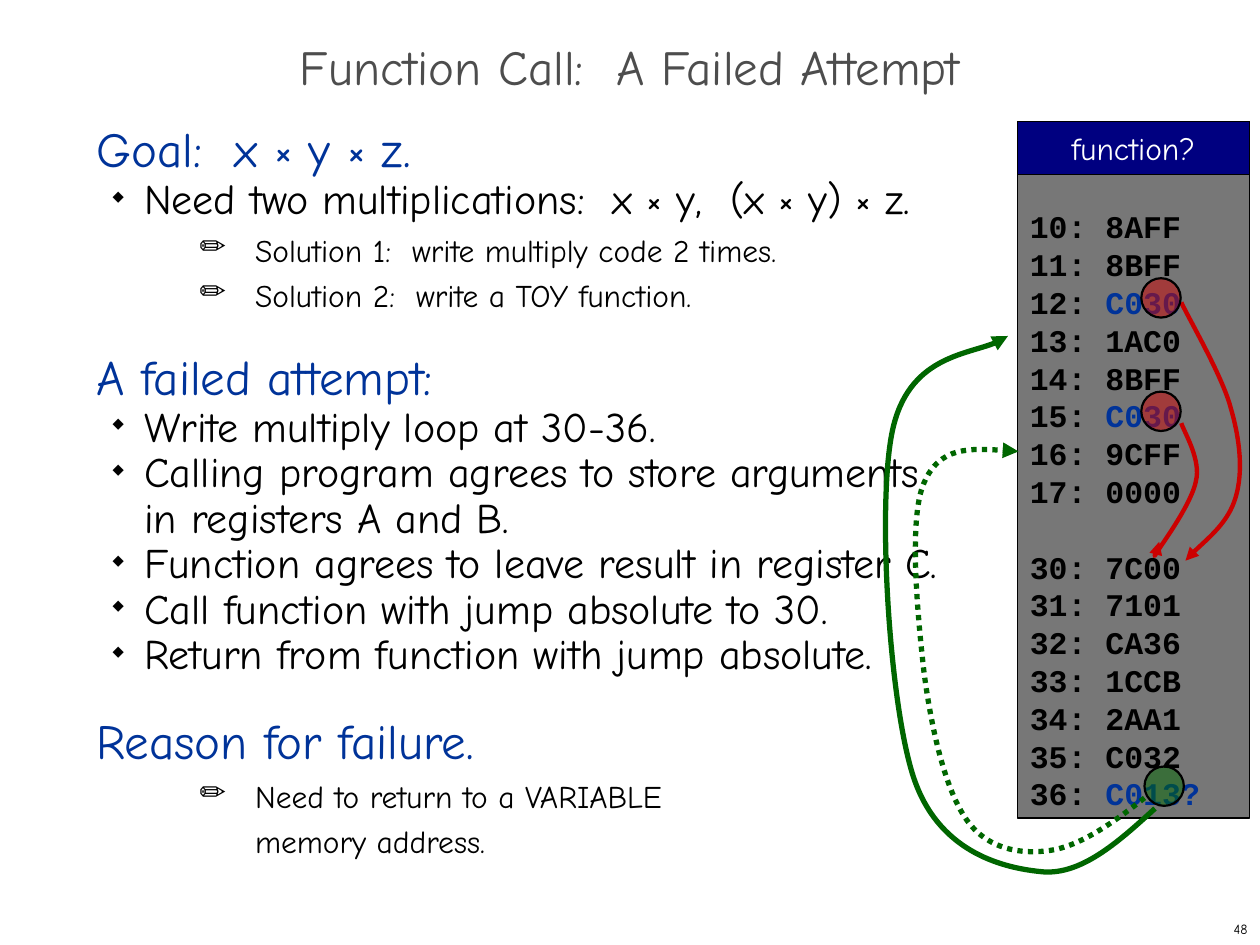
from lxml.etree import SubElement
from pptx import Presentation
from pptx.dml.color import RGBColor
from pptx.enum.dml import MSO_LINE
from pptx.enum.shapes import MSO_SHAPE as Shape
from pptx.enum.text import MSO_ANCHOR as Anchor, PP_ALIGN as Align
from pptx.oxml.ns import qn
from pptx.util import Inches, Pt

BLACK = RGBColor(0x00, 0x00, 0x00)
WHITE = RGBColor(0xFF, 0xFF, 0xFF)
TITLE_GRAY = RGBColor(0x4D, 0x4D, 0x4D)
PANEL_GRAY = RGBColor(0x77, 0x77, 0x77)
BLUE = RGBColor(0x00, 0x33, 0x99)
NAVY = RGBColor(0x00, 0x00, 0x80)
RED = RGBColor(0xCC, 0x00, 0x00)
GREEN = RGBColor(0x00, 0x66, 0x00)

# Outline levels: size, colour, margin, indent (inches), bullet, bullet size
LEVELS = {
    "heading": (28, BLUE, 0, 0, None, None),
    "point": (24, BLACK, 0.38, -0.25, "◆", 35),
    "detail": (18, BLACK, 1.26, -0.44, "✏", 100),
}
OUTLINE = [
    ("heading", "Goal:  x × y × z."),
    ("point", "Need two multiplications:  x × y,  (x × y) × z."),
    ("detail", "Solution 1:  write multiply code 2 times."),
    ("detail", "Solution 2:  write a TOY function."),
    ("heading", "A failed attempt:"),
    ("point", "Write multiply loop at 30-36."),
    ("point", "Calling program agrees to store arguments\vin registers A and B."),
    ("point", "Function agrees to leave result in register C."),
    ("point", "Call function with jump absolute to 30."),
    ("point", "Return from function with jump absolute."),
    ("heading", "Reason for failure."),
    ("detail", "Need to return to a VARIABLE\vmemory address."),
]
# Address, instruction
PROGRAM = [
    ("10", "8AFF"), ("11", "8BFF"), ("12", "C030"), ("13", "1AC0"),
    ("14", "8BFF"), ("15", "C030"), ("16", "9CFF"), ("17", "0000"),
    ("30", "7C00"), ("31", "7101"), ("32", "CA36"), ("33", "1CCB"),
    ("34", "2AA1"), ("35", "C032"), ("36", "C013?"),
]
JUMPS = {"12", "15", "36"}

# Curves: start point, then two control points and an end point per segment
CALL_FROM_12 = [(112.5, 28.8), (113.3, 30.5), (116.4, 35.8), (117.2, 38.8),
                (118.1, 41.9), (118.4, 44.9), (117.7, 47.3),
                (117, 49.8), (113.9, 52.2), (112.9, 53.4)]
CALL_FROM_15 = [(112.5, 40.3), (112.8, 41.2), (114.4, 43.8), (113.9, 45.8),
                (113.5, 47.9), (110.9, 51.5), (110.3, 52.4),
                (109.7, 53.4), (110.4, 51.8), (110.4, 51.6)]
RETURN_TO_13 = [(110, 77), (106.4, 80.3), (102.8, 83.5), (99, 83),
                (95.2, 82.6), (89.3, 81), (87, 74),
                (84.7, 67), (83.5, 48), (85, 41),
                (86.5, 34), (94.2, 33.5), (96, 32)]
RETURN_TO_16 = [(109, 76), (106, 78.4), (102.8, 80.6), (100, 81),
                (97.2, 81.4), (94, 80.9), (92, 78),
                (90, 75.1), (88.7, 69.4), (88, 64),
                (87.4, 58.7), (86.5, 49.4), (88, 46),
                (89.5, 42.5), (93.2, 42.7), (97, 43)]


class SlideBuilder:
    """Style and current slide, on a grid of 120 columns by 90 rows."""

    font = "Comic Neue"
    code_font = "Courier New"
    outline_pitch = Pt(26)
    code_pitch = Pt(21.6)

    def __init__(self, presentation):
        self.cell = presentation.slide_width / 120
        self.slide = presentation.slides.add_slide(presentation.slide_layouts[6])

    def grid(self, *values):
        return [round(value * self.cell) for value in values]

    def style(self, paragraph, size, color, font=None):
        paragraph.font.name = font or self.font
        paragraph.font.size = Pt(size)
        paragraph.font.color.rgb = color

    def text(self, box, content, size, color, align, spacing=1.0):
        shape = self.slide.shapes.add_textbox(*self.grid(*box))
        shape.text_frame.word_wrap = True
        self.label(shape, content, size, color, align).line_spacing = spacing

    def label(self, shape, content, size, color, align):
        shape.text_frame.vertical_anchor = Anchor.MIDDLE
        paragraph = shape.text_frame.paragraphs[0]
        paragraph.text = content
        paragraph.alignment = align
        self.style(paragraph, size, color)
        return paragraph

    def outline(self, box, items):
        frame = self.slide.shapes.add_textbox(*self.grid(*box)).text_frame
        frame.word_wrap = True
        for index, (level, content) in enumerate(items):
            paragraph = frame.add_paragraph() if index else frame.paragraphs[0]
            size, color, margin, indent, bullet, bullet_size = LEVELS[level]
            paragraph.text = content
            paragraph.line_spacing = self.outline_pitch
            if index and level == "heading":
                paragraph.space_before = self.outline_pitch
            self.style(paragraph, size, color)
            if bullet:
                self.bullet(paragraph, margin, indent, bullet, bullet_size)

    def bullet(self, paragraph, margin, indent, character, size):
        properties = paragraph._p.get_or_add_pPr()
        properties.set("marL", str(Inches(margin)))
        properties.set("indent", str(Inches(indent)))
        color = SubElement(properties, qn("a:buClr"))
        SubElement(color, qn("a:srgbClr"), val=str(BLACK))
        SubElement(properties, qn("a:buSzPct"), val=str(size * 1000))
        SubElement(properties, qn("a:buChar"), char=character)

    def shape(self, kind, box, fill, line_width, alpha=None):
        shape = self.slide.shapes.add_shape(kind, *self.grid(*box))
        shape.shadow.inherit = False
        shape.fill.solid()
        shape.fill.fore_color.rgb = fill
        if alpha:
            color = shape._element.xpath("p:spPr/a:solidFill/a:srgbClr")[0]
            SubElement(color, qn("a:alpha"), val=str(alpha * 1000))
        shape.line.color.rgb = BLACK
        shape.line.width = Pt(line_width)
        return shape

    def code(self, shape, program):
        frame = shape.text_frame
        frame.vertical_anchor = Anchor.TOP
        frame.margin_top = Inches(0.68)
        for index, (address, instruction) in enumerate(program):
            paragraph = frame.add_paragraph() if index else frame.paragraphs[0]
            paragraph.alignment = Align.LEFT
            paragraph.line_spacing = self.code_pitch
            if address == "30":
                paragraph.space_before = self.code_pitch
            self.style(paragraph, 18, BLACK, self.code_font)
            paragraph.font.bold = True
            paragraph.add_run().text = f"{address}: "
            run = paragraph.add_run()
            run.text = instruction
            run.font.color.rgb = BLUE if address in JUMPS else BLACK

    def curve(self, points, color, width, dash=None):
        start, *rest = [self.grid(*point) for point in points]
        builder = self.slide.shapes.build_freeform(*start)
        builder.add_line_segments(rest, close=False)
        shape = builder.convert_to_shape()
        # Join every three line points into one Bezier segment
        lines = shape._element.xpath(".//a:lnTo")
        outline = lines[0].getparent()
        for first in range(0, len(lines), 3):
            segment = SubElement(outline, qn("a:cubicBezTo"))
            for line in lines[first:first + 3]:
                segment.append(line[0])
                outline.remove(line)
        shape.shadow.inherit = False
        shape.fill.background()
        shape.line.color.rgb = color
        shape.line.width = Pt(width)
        if dash:
            shape.line.dash_style = dash
        stroke = shape._element.xpath("p:spPr/a:ln")[0]
        SubElement(stroke, qn("a:tailEnd"), type="triangle")


def main():
    presentation = Presentation()
    presentation.slide_width, presentation.slide_height = Inches(10), Inches(7.5)
    builder = SlideBuilder(presentation)

    # Page number, title and outline
    builder.text((95, 87, 25, 3), "48", 8, BLACK, Align.RIGHT)
    builder.text((0, 4, 120, 6), "Function Call:  A Failed Attempt",
                 28, TITLE_GRAY, Align.CENTER, 0.7)
    builder.outline((8, 12, 103, 71), OUTLINE)

    # Program listing with its header
    panel = builder.shape(Shape.RECTANGLE, (96.9, 11.6, 22.1, 66.3), PANEL_GRAY, 0.75)
    builder.code(panel, PROGRAM)
    header = builder.shape(Shape.RECTANGLE, (96.9, 11.6, 22.1, 5), NAVY, 0.75)
    builder.label(header, "function?", 18, WHITE, Align.CENTER)

    # Calls, marked addresses and returns
    for points in (CALL_FROM_12, CALL_FROM_15):
        builder.curve(points, RED, 2.5)
    for left, top, color in ((108.7, 26.5, RED), (108.7, 37.3, RED), (109, 73, GREEN)):
        builder.shape(Shape.OVAL, (left, top, 3.75, 3.75), color, 1.25, alpha=50)
    builder.curve(RETURN_TO_13, GREEN, 3)
    builder.curve(RETURN_TO_16, GREEN, 3, MSO_LINE.ROUND_DOT)

    presentation.save("out.pptx")


if __name__ == "__main__":
    main()
